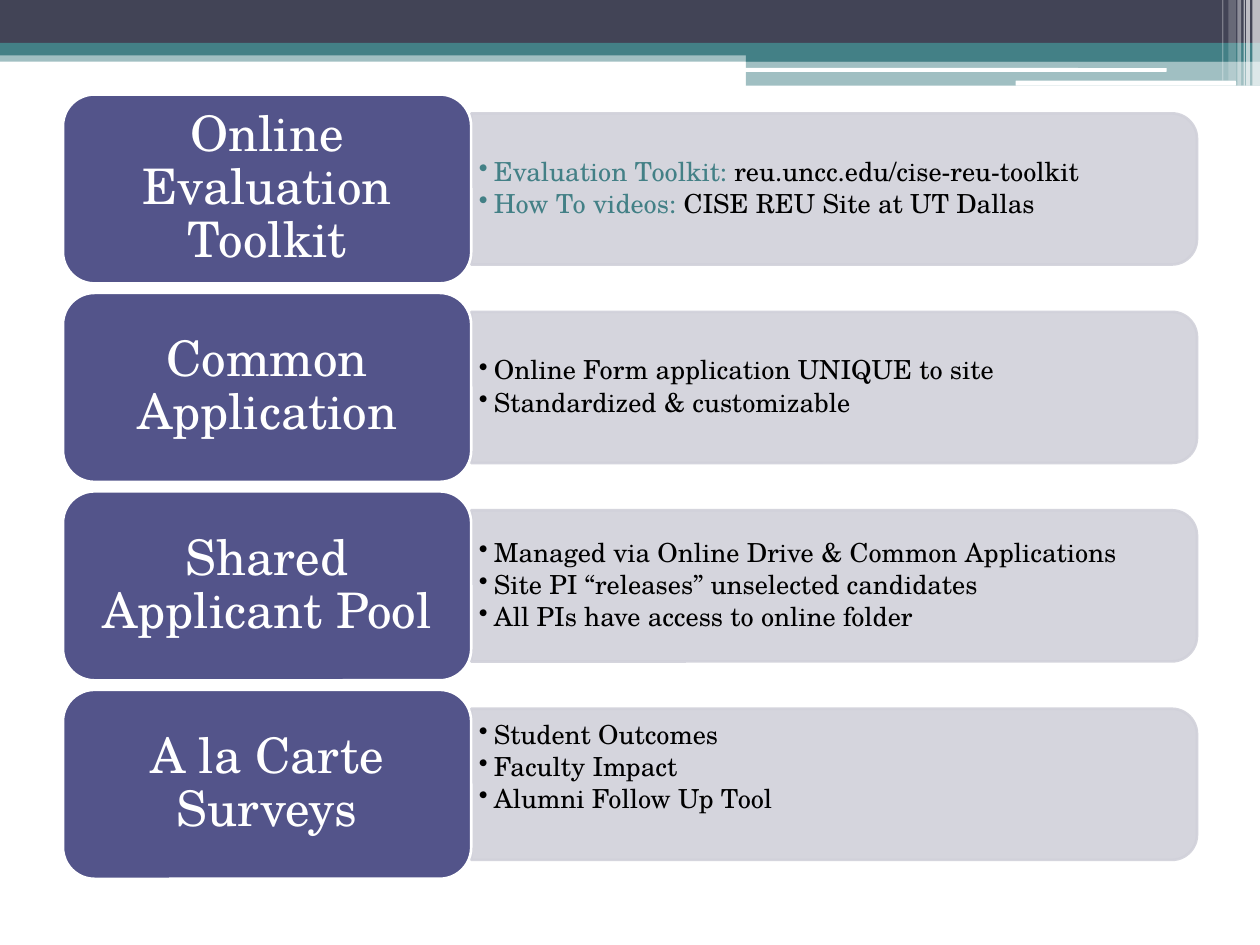
from lxml import etree
from pptx import Presentation
from pptx.dml.color import RGBColor
from pptx.enum.shapes import MSO_SHAPE
from pptx.enum.text import MSO_ANCHOR, PP_ALIGN
from pptx.oxml.ns import qn
from pptx.util import Inches, Pt

RECT = MSO_SHAPE.RECTANGLE
ROUND = MSO_SHAPE.ROUNDED_RECTANGLE
ROUND_TOP = MSO_SHAPE.ROUND_2_SAME_RECTANGLE
MIDDLE = MSO_ANCHOR.MIDDLE
CENTER = PP_ALIGN.CENTER

COLUMNS, ROWS = 100, 75
FONT = "TeX Gyre Schola"
WHITE, BLACK = "FFFFFF", "000000"
TEAL, SLATE, INDIGO, MIST = "438086", "424456", "53548A", "D1D1DA"


def color(hex_string):
    return RGBColor.from_string(hex_string)


def set_opacity(fill, percent):
    """Make a solid fill (of a shape or a line) partly transparent."""
    for tone in fill._xPr.iter(qn("a:srgbClr")):
        etree.SubElement(tone, qn("a:alpha")).set("val", str(percent * 1000))


class SlideBuilder:
    """Holds the style and the page; lengths are grid columns and rows."""

    def __init__(self, deck):
        self.page = deck.slides.add_slide(deck.slide_layouts[6])
        self.column = deck.slide_width / COLUMNS
        self.row = deck.slide_height / ROWS

    def place(self, left, top, width, height):
        return (round(left * self.column), round(top * self.row),
                round(width * self.column), round(height * self.row))

    def shape(self, kind, at, fill, opacity=100, line=None):
        shape = self.page.shapes.add_shape(kind, *self.place(*at))
        shape.shadow.inherit = False
        shape.fill.solid()
        shape.fill.fore_color.rgb = color(fill)
        if line:
            shape.line.color.rgb = color(line)
            shape.line.width = Pt(1.5)
        else:
            shape.line.fill.background()
        if opacity < 100:
            set_opacity(shape.fill, opacity)  # covers the line as well
        return shape

    def frame(self, box, side, edge):
        frame = box.text_frame
        frame.word_wrap = True
        frame.vertical_anchor = MIDDLE
        frame.margin_left = frame.margin_right = Inches(side)
        frame.margin_top = frame.margin_bottom = Inches(edge)
        return frame

    def format(self, para, size, after, tones):
        para.line_spacing = 0.9
        para.space_after = Pt(after)
        for span, tone in zip(para.runs, tones):
            span.font.name = FONT
            span.font.size = Pt(size)
            span.font.color.rgb = color(tone)

    def bullet(self, para):
        props = para._p.get_or_add_pPr()
        props.set("marL", str(Inches(0.12)))
        props.set("indent", str(-Inches(0.12)))
        etree.SubElement(props, qn("a:buChar")).set("char", "•")

    def heading(self, at, text):
        card = self.shape(ROUND, at, INDIGO, line=WHITE)
        frame = self.frame(card, 0.12, 0.06)
        frame.text = text
        para = frame.paragraphs[0]
        para.alignment = CENTER
        self.format(para, 28, 9.8, [WHITE])

    def bar(self, left, top, width, height):
        # A tall shape turned a quarter, so its round corners face right
        at = (left + (width - height) / 2, top - (width - height) / 2, height, width)
        self.shape(ROUND_TOP, at, MIST, 90, MIST).rotation = 90

    def bullets(self, at, lines, spare):
        box = self.page.shapes.add_textbox(*self.place(*at))
        frame = self.frame(box, 0.06, 0.03)
        frame.margin_bottom = Inches(0.03 + spare)
        for number, (label, text) in enumerate(lines):
            para = frame.add_paragraph() if number else frame.paragraphs[0]
            para.text = label or text
            if label:
                para.add_run().text = text
            self.bullet(para)
            self.format(para, 15, 2.25, [TEAL, BLACK] if label else [BLACK])


# Header bands: kind, place, fill, opacity
BANDS = [
    (RECT, (0, 4, 100, 0.9), TEAL, 50),
    (RECT, (0, 0, 100, 3.4), SLATE, 100),
    (RECT, (0, 3.4, 100, 1), TEAL, 100),
    (RECT, (59.2, 3.9, 40.8, 1), TEAL, 100),
    (RECT, (59.2, 4.8, 40.8, 2), TEAL, 50),
    (ROUND, (59.1, 5.4, 33.5, 0.3), WHITE, 100),
    (ROUND, (80.6, 6.4, 17.5, 0.4), WHITE, 100),
]

# Light stripes at the right edge: left, width, height, opacity
STRIPES = [
    (99.4, 0.6, 6.8, 65), (98.9, 0.3, 6.8, 65), (98.7, 0.1, 6.8, 60),
    (98.2, 0.3, 6.8, 40), (97.5, 0.6, 6.4, 20), (97, 0.1, 6.4, 30),
]

# Topics: heading, lines of (label, text), spare inches below the lines
TOPICS = [
    ("Online Evaluation Toolkit", [
        ("Evaluation Toolkit: ", "reu.uncc.edu/cise-reu-toolkit"),
        ("How To videos: ", "CISE REU Site at UT Dallas")], 0),
    ("Common Application", [
        ("", "Online Form application UNIQUE to site"),
        ("", "Standardized & customizable")], 0),
    ("Shared Applicant Pool", [
        ("", "Managed via Online Drive & Common Applications"),
        ("", "Site PI “releases” unselected candidates"),
        ("", "All PIs have access to online folder")], 0),
    ("A la Carte Surveys", [
        ("", "Student Outcomes"),
        ("", "Faculty Impact"),
        ("", "Alumni Follow Up Tool")], 0.26),
]
FIRST_TOP, PITCH = 7.5, 15.75
CARD_LEFT, CARD_WIDTH, CARD_HEIGHT = 5, 32.4, 15
BAR_LEFT, BAR_WIDTH, BAR_HEIGHT = CARD_LEFT + CARD_WIDTH, 57.6, 12
TEXT_WIDTH, TEXT_HEIGHT = 57, 10.8


def main():
    deck = Presentation()
    deck.slide_width, deck.slide_height = Inches(10), Inches(7.5)
    builder = SlideBuilder(deck)

    # Header
    for kind, at, fill, opacity in BANDS:
        builder.shape(kind, at, fill, opacity)
    for left, width, height, opacity in STRIPES:
        builder.shape(RECT, (left, 0, width, height), WHITE, opacity)

    # Topic rows, each centred on its card
    for number, (heading, lines, spare) in enumerate(TOPICS):
        top = FIRST_TOP + number * PITCH
        middle = top + CARD_HEIGHT / 2
        builder.bar(BAR_LEFT, middle - BAR_HEIGHT / 2, BAR_WIDTH, BAR_HEIGHT)
        builder.bullets((BAR_LEFT, middle - TEXT_HEIGHT / 2, TEXT_WIDTH, TEXT_HEIGHT),
                        lines, spare)
        builder.heading((CARD_LEFT, top, CARD_WIDTH, CARD_HEIGHT), heading)

    deck.save("out.pptx")


if __name__ == "__main__":
    main()
